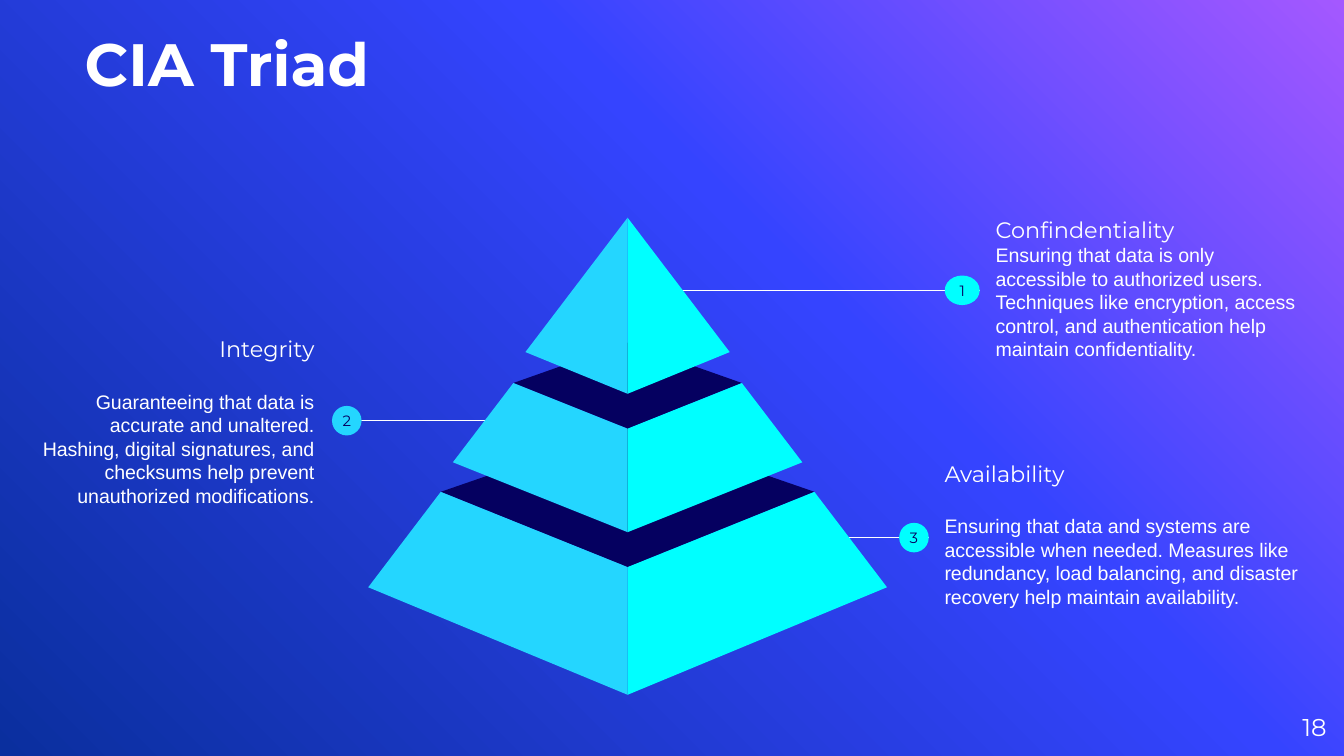
from copy import deepcopy

from lxml.etree import SubElement
from pptx import Presentation
from pptx.dml.color import RGBColor
from pptx.enum.shapes import MSO_CONNECTOR, MSO_SHAPE
from pptx.enum.text import MSO_ANCHOR as ANCHOR, MSO_AUTO_SIZE, PP_ALIGN as ALIGN
from pptx.oxml.ns import qn
from pptx.util import Inches, Pt

WHITE, NAVY, SKY, CYAN = "FFFFFF", "050060", "24D6FF", "00FFFF"
HEAD_FONT, BODY_FONT = "Montserrat", "Arial"
AXIS = 4.67  # x of the pyramid's front edge

BACKGROUND_STOPS = [(0, "A458FF"), (0.39, "3544FF"), (1, "0A2F9E")]

# Top face (or None) and left face of each layer, from the base up
LAYERS = [
    ([(3.28, 3.66), (AXIS, 4.22), (6.06, 3.66), (AXIS, 3.18)],
     [(3.28, 3.66), (2.74, 4.37), (AXIS, 5.17), (AXIS, 4.22)]),
    ([(3.82, 2.85), (AXIS, 3.19), (5.52, 2.85), (AXIS, 2.55)],
     [(3.82, 2.85), (3.37, 3.44), (AXIS, 3.96), (AXIS, 3.19)]),
    (None, [(AXIS, 1.62), (3.91, 2.62), (AXIS, 2.93)]),
]

# heading, body, text box, alignment, gap after heading (pt)
NOTES = [
    ("Confindentiality",
     "Ensuring that data is only accessible to authorized users. Techniques like "
     "encryption, access control, and authentication help maintain confidentiality.",
     (7.31, 1.39, 2.46, 1.51), ALIGN.LEFT, 0),
    ("Integrity",
     "Guaranteeing that data is accurate and unaltered. Hashing, digital signatures, "
     "and checksums help prevent unauthorized modifications.",
     (0.17, 2.38, 2.27, 1.51), ALIGN.RIGHT, 14.5),
    ("Availability",
     "Ensuring that data and systems are accessible when needed. Measures like "
     "redundancy, load balancing, and disaster recovery help maintain availability.",
     (6.93, 3.22, 2.84, 1.51), ALIGN.LEFT, 14.5),
]

# line start x, line end x, y, badge left, badge width, badge colour
MARKERS = [
    (5.03, 7.29, 2.16, 7.03, 0.26, CYAN),
    (3.7, 2.54, 3.13, 2.47, 0.22, SKY),
    (6.27, 6.91, 4, 6.69, 0.22, CYAN),
]


def rgb(color):
    return RGBColor.from_string(color)


def style(p, size, font=HEAD_FONT, color=WHITE, bold=False, align=ALIGN.LEFT):
    p.alignment = align
    for r in p.runs:
        r.font.size, r.font.name, r.font.bold = Pt(size), font, bold
        r.font.color.rgb = rgb(color)


def set_frame(tf, margin, anchor, wrap=True):
    tf.margin_left = tf.margin_right = tf.margin_top = tf.margin_bottom = Inches(margin)
    tf.vertical_anchor = anchor
    tf.word_wrap = wrap
    tf.auto_size = MSO_AUTO_SIZE.NONE


def paint(sp, color):
    sp.shadow.inherit = False
    sp.fill.solid()
    sp.fill.fore_color.rgb = rgb(color)
    sp.line.fill.background()


def set_background(s):
    fill = s.background.fill
    fill.gradient()
    fill.gradient_angle = 225
    stop_list = next(s.element.iter(qn("a:gsLst")))
    stop_list.append(deepcopy(stop_list[0]))
    for stop, (position, color) in zip(fill.gradient_stops, BACKGROUND_STOPS):
        stop.position = position
        stop.color.rgb = rgb(color)


def add_title(s, text):
    sp = s.shapes.title
    sp.left, sp.top, sp.width, sp.height = map(Inches, (0.63, 0.23, 6.58, 0.5))
    tf = sp.text_frame
    tf.text = text
    set_frame(tf, 0, ANCHOR.BOTTOM)
    style(tf.paragraphs[0], 32, bold=True)


def add_page_number(s, number):
    tf = s.shapes.add_textbox(*map(Inches, (9.27, 5.19, 0.6, 0.43))).text_frame
    tf.text = number
    set_frame(tf, 0, ANCHOR.MIDDLE)
    style(tf.paragraphs[0], 13, align=ALIGN.RIGHT)


def add_note(s, heading, body, box, align, gap):
    tf = s.shapes.add_textbox(*map(Inches, box)).text_frame
    set_frame(tf, 0.1, ANCHOR.MIDDLE)
    tf.text = heading
    p = tf.paragraphs[0]
    style(p, 12, align=align)
    p.space_after = Pt(gap)
    p = tf.add_paragraph()
    p.text = body
    style(p, 10.5, BODY_FONT, align=align)


def add_marker(s, number, start, end, y, left, width, color):
    """Draw a leader line that ends in a numbered badge."""
    line = s.shapes.add_connector(
        MSO_CONNECTOR.STRAIGHT, *map(Inches, (start, y, end, y)))
    line.line.color.rgb = rgb(WHITE)
    line.line.width = Pt(0.75)
    SubElement(line._element.spPr, qn("a:effectLst"))
    badge = s.shapes.add_shape(
        MSO_SHAPE.OVAL, *map(Inches, (left, y - 0.11, width, 0.22)))
    paint(badge, color)
    tf = badge.text_frame
    tf.text = str(number)
    set_frame(tf, 0, ANCHOR.MIDDLE, wrap=False)
    style(tf.paragraphs[0], 8, color=NAVY, align=ALIGN.CENTER)


def add_face(s, points, color):
    corners = [(Inches(x), Inches(y)) for x, y in points]
    builder = s.shapes.build_freeform(*corners[0])
    builder.add_line_segments(corners[1:], close=True)
    paint(builder.convert_to_shape(), color)


def add_layer(s, top, left):
    if top:
        add_face(s, top, NAVY)
    add_face(s, left, SKY)
    add_face(s, [(2 * AXIS - x, y) for x, y in left], CYAN)


def main():
    prs = Presentation()
    prs.slide_width = Inches(10)
    prs.slide_height = Inches(10 * 9 / 16)
    s = prs.slides.add_slide(prs.slide_layouts[5])
    set_background(s)
    add_title(s, "CIA Triad")
    add_page_number(s, "18")
    for number, (note, marker) in enumerate(zip(NOTES, MARKERS), 1):
        add_note(s, *note)
        add_marker(s, number, *marker)
    for layer in LAYERS:
        add_layer(s, *layer)
    prs.save("out.pptx")


if __name__ == "__main__":
    main()
